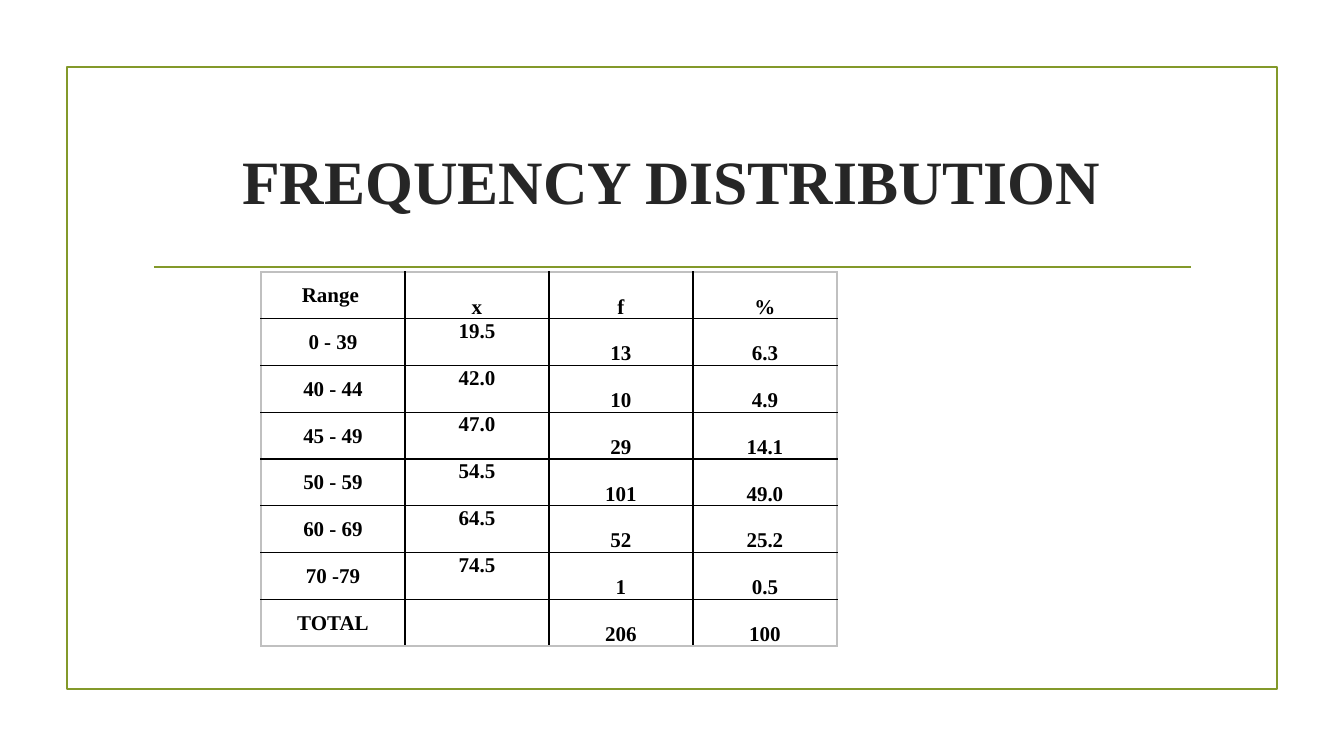
from lxml.etree import SubElement
from pptx import Presentation
from pptx.dml.color import RGBColor
from pptx.enum.shapes import MSO_CONNECTOR, MSO_SHAPE
from pptx.enum.text import MSO_ANCHOR, PP_ALIGN
from pptx.oxml.ns import qn
from pptx.util import Emu, Pt

TITLE = "FREQUENCY DISTRIBUTION"
ROWS = [
    ("Range ", "x", "f", "%"),
    ("0 - 39", "19.5", "13", "6.3"),
    ("40 - 44", "42.0", "10", "4.9"),
    ("45 - 49", "47.0", "29", "14.1"),
    ("50 - 59", "54.5", "101", "49.0"),
    ("60 - 69", "64.5", "52", "25.2"),
    ("70 -79", "74.5", "1", "0.5"),
    ("TOTAL", "", "206", "100"),
]
COLORS = {"olive": "83992A", "title": "262626", "text": "000000",
          "grid": "000000", "edge": "C0C0C0"}
FONT = "Times New Roman"

SLIDE = (1344, 756)
FRAME = (67, 67, 1210, 622)
RULE = (154, 267, 1191, 267)
TITLE_BOX = (143, 108, 1058, 144)
TABLE_BOX = (261, 272, 576, 374)


def px(*lengths):
    return [Emu(round(n * 914400 / 100.8)) for n in lengths]


def rgb(name):
    return RGBColor.from_string(COLORS[name])


def write(tf, text, size, color):
    p = tf.paragraphs[0]
    p.alignment = PP_ALIGN.CENTER
    r = p.add_run()
    r.text = text
    r.font.name, r.font.size, r.font.bold = FONT, Pt(size), True
    r.font.color.rgb = rgb(color)


def border(cell, side, color):
    ln = SubElement(cell._tc.get_or_add_tcPr(), qn(f"a:ln{side}"), w=str(Pt(1)))
    fill = SubElement(ln, qn("a:solidFill"))
    SubElement(fill, qn("a:srgbClr"), val=COLORS[color])


def anchor_for(row, col):
    if col == 0:
        return MSO_ANCHOR.MIDDLE
    return MSO_ANCHOR.TOP if col == 1 and row > 0 else MSO_ANCHOR.BOTTOM


prs = Presentation()
prs.slide_width, prs.slide_height = px(*SLIDE)
s = prs.slides.add_slide(prs.slide_layouts[6])

frame = s.shapes.add_shape(MSO_SHAPE.RECTANGLE, *px(*FRAME))
frame.shadow.inherit = False
frame.fill.background()
rule = s.shapes.add_connector(MSO_CONNECTOR.STRAIGHT, *px(*RULE))
SubElement(rule._element.spPr, qn("a:effectLst"))
for sp in (frame, rule):
    sp.line.color.rgb = rgb("olive")
    sp.line.width = Pt(1.25)

tf = s.shapes.add_textbox(*px(*TITLE_BOX)).text_frame
tf.word_wrap = True
tf.vertical_anchor = MSO_ANCHOR.MIDDLE
write(tf, TITLE, 44, "title")

last_row, last_col = len(ROWS) - 1, len(ROWS[0]) - 1
table = s.shapes.add_table(len(ROWS), len(ROWS[0]), *px(*TABLE_BOX)).table
table.first_row = table.horz_banding = False
for i, row in enumerate(ROWS):
    for j, text in enumerate(row):
        cell = table.cell(i, j)
        cell.margin_left, cell.margin_top, cell.margin_right, cell.margin_bottom = px(1, 1, 1, 0)
        cell.vertical_anchor = anchor_for(i, j)
        outer = {"L": j == 0, "R": j == last_col, "T": i == 0, "B": i == last_row}
        for side, at_edge in outer.items():
            border(cell, side, "edge" if at_edge else "grid")
        cell.fill.background()
        if text:
            write(cell.text_frame, text, 15, "text")

prs.save("out.pptx")
